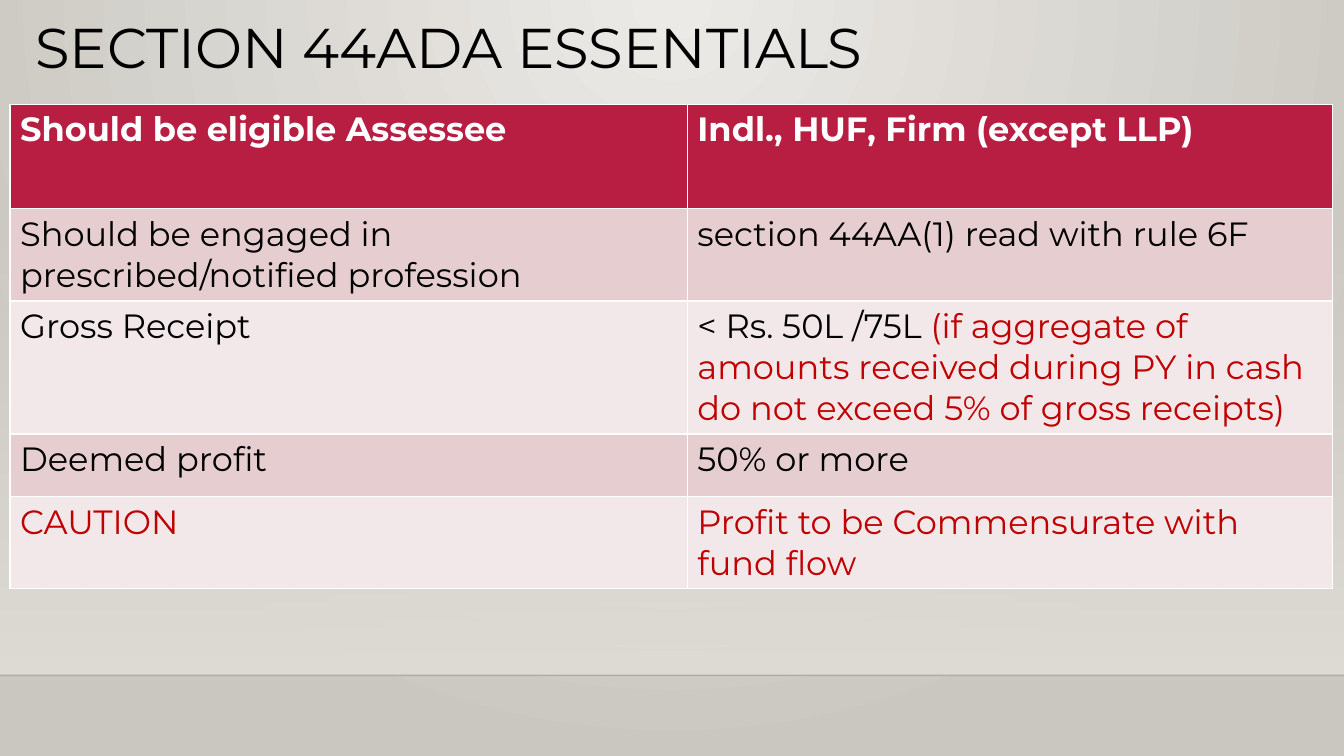
"""Build the Section 44ADA essentials slide."""
from lxml.etree import SubElement
from pptx import Presentation
from pptx.dml.color import RGBColor
from pptx.enum.shapes import MSO_CONNECTOR, MSO_SHAPE
from pptx.enum.text import MSO_ANCHOR, PP_ALIGN
from pptx.oxml.ns import qn
from pptx.util import Pt

WHITE = RGBColor(0xFF, 0xFF, 0xFF)
BLACK = RGBColor(0x00, 0x00, 0x00)
RED = RGBColor(0xC0, 0x00, 0x00)
CRIMSON = RGBColor(0xB7, 0x1E, 0x42)
PINK = RGBColor(0xE6, 0xCD, 0xCF)
PALE_PINK = RGBColor(0xF3, 0xE8, 0xE9)
LIGHT_STONE = RGBColor(0xEC, 0xEA, 0xE7)
DARK_STONE = RGBColor(0xCA, 0xC7, 0xC1)
SAND = RGBColor(0xDF, 0xDB, 0xD5)
HORIZON = RGBColor(0x00, 0x00, 0x01)
FONT = "Montserrat"
WIDTH = 960
FLOOR_TOP = 482.4


def set_gradient(fill, start, end):
    fill.gradient()
    for stop, color, position in zip(fill.gradient_stops, (start, end), (0, 1)):
        stop.color.rgb = color
        stop.position = position


def format_run(run, size, color, bold=False):
    run.font.name = FONT
    run.font.size = Pt(size)
    run.font.color.rgb = color
    run.font.bold = bold


presentation = Presentation()
presentation.slide_width = Pt(WIDTH)
presentation.slide_height = Pt(540)
slide = presentation.slides.add_slide(presentation.slide_layouts[5])

set_gradient(slide.background.fill, LIGHT_STONE, DARK_STONE)
background_gradient = slide.element.find(".//" + qn("a:gradFill"))
background_gradient.remove(background_gradient.find(qn("a:lin")))
circle = SubElement(background_gradient, qn("a:path"), {"path": "circle"})
SubElement(circle, qn("a:fillToRect"), {"l": "43000", "t": "0", "r": "43000", "b": "100000"})

wall = slide.shapes.add_shape(MSO_SHAPE.RECTANGLE, Pt(0), Pt(159), Pt(WIDTH), Pt(FLOOR_TOP - 159))
wall.shadow.inherit = False
wall.line.fill.background()
set_gradient(wall.fill, SAND, SAND)
wall.fill.gradient_angle = 270
SubElement(wall.element.find(".//" + qn("a:srgbClr")), qn("a:alpha"), {"val": "0"})

horizon = slide.shapes.add_connector(
    MSO_CONNECTOR.STRAIGHT, Pt(0), Pt(FLOOR_TOP), Pt(WIDTH), Pt(FLOOR_TOP))
horizon.line.color.rgb = HORIZON
horizon.line.width = Pt(1)
SubElement(horizon.element.find(".//" + qn("a:srgbClr")), qn("a:alpha"), {"val": "20000"})
SubElement(horizon.element.spPr, qn("a:effectLst"))

title = slide.shapes.title
title.left, title.top, title.width, title.height = Pt(18), Pt(9.4), Pt(852.5), Pt(52.6)
title.text_frame.text = "SECTION 44ADA ESSENTIALS"
title.text_frame.vertical_anchor = MSO_ANCHOR.MIDDLE
title.text_frame.word_wrap = True
title_paragraph = title.text_frame.paragraphs[0]
title_paragraph.alignment = PP_ALIGN.LEFT
title_paragraph.line_spacing = 0.9
format_run(title_paragraph.runs[0], 40, BLACK)

table_rows = [
    [[("Should be eligible Assessee", WHITE)], [("Indl., HUF, Firm (except LLP)", WHITE)]],
    [[("Should be engaged in prescribed/notified profession", BLACK)],
     [("section 44AA(1) read with rule 6F", BLACK)]],
    [[("Gross Receipt", BLACK)],
     [("< Rs. 50L /75L ", BLACK),
      ("(if aggregate of amounts received during PY in cash "
       "do not exceed 5% of gross receipts)", RED)]],
    [[("Deemed profit", BLACK)], [("50% or more", BLACK)]],
    [[("CAUTION", RED)], [("Profit to be Commensurate with fund flow", RED)]],
]
column_widths = [483.8, 460.8]
row_heights = [74.8] + [44.6] * 4
table = slide.shapes.add_table(
    len(table_rows), len(column_widths), Pt(7.2), Pt(74.4),
    Pt(sum(column_widths)), Pt(sum(row_heights))).table
for column, width in zip(table.columns, column_widths):
    column.width = Pt(width)
for row_index, (row, height, contents) in enumerate(zip(table.rows, row_heights, table_rows)):
    row.height = Pt(height)
    is_header = row_index == 0
    band_color = PINK if row_index % 2 else PALE_PINK
    for cell, pieces in zip(row.cells, contents):
        cell.fill.solid()
        cell.fill.fore_color.rgb = CRIMSON if is_header else band_color
        for text, color in pieces:
            run = cell.text_frame.paragraphs[0].add_run()
            run.text = text
            format_run(run, 24, color, is_header)

presentation.save("out.pptx")
